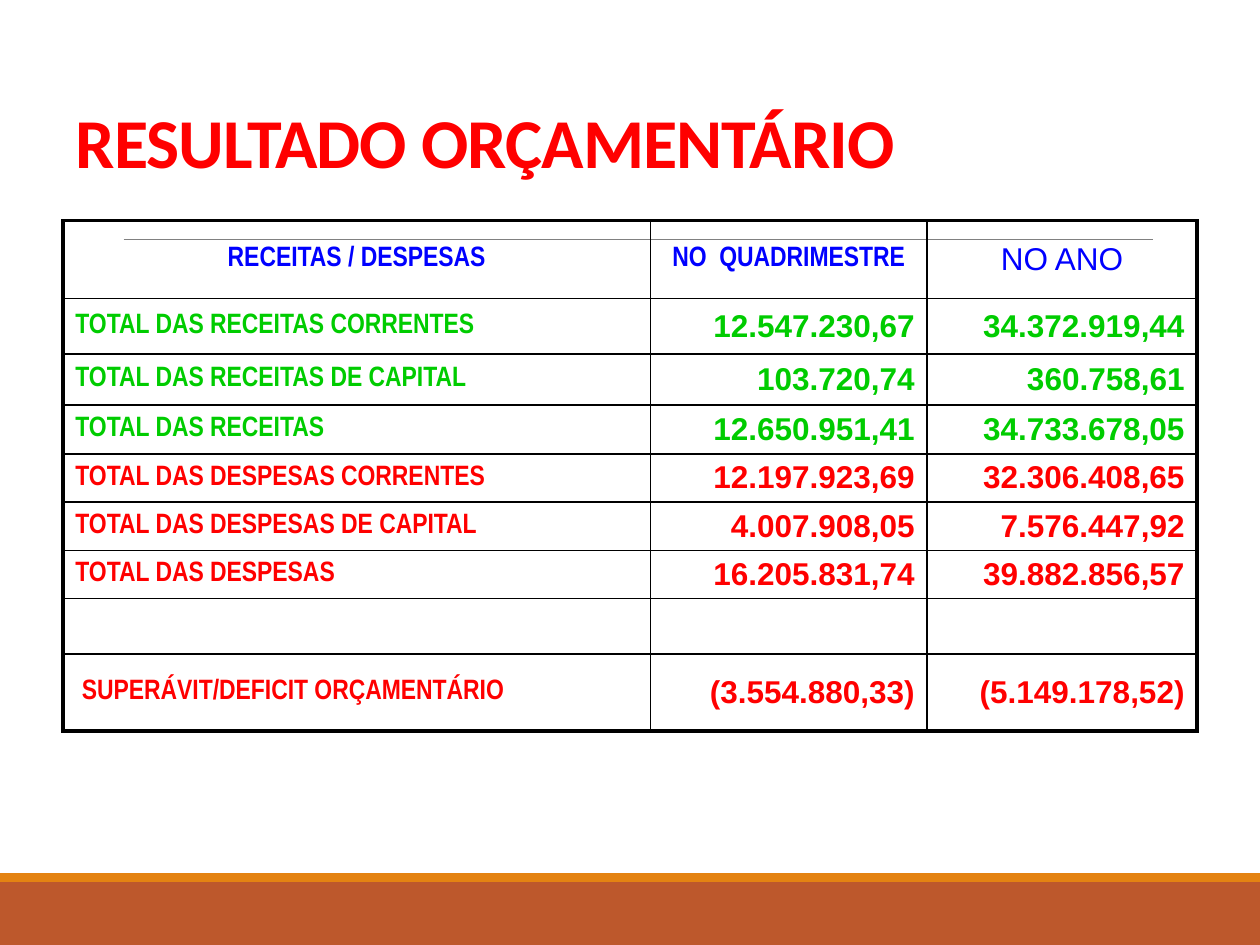
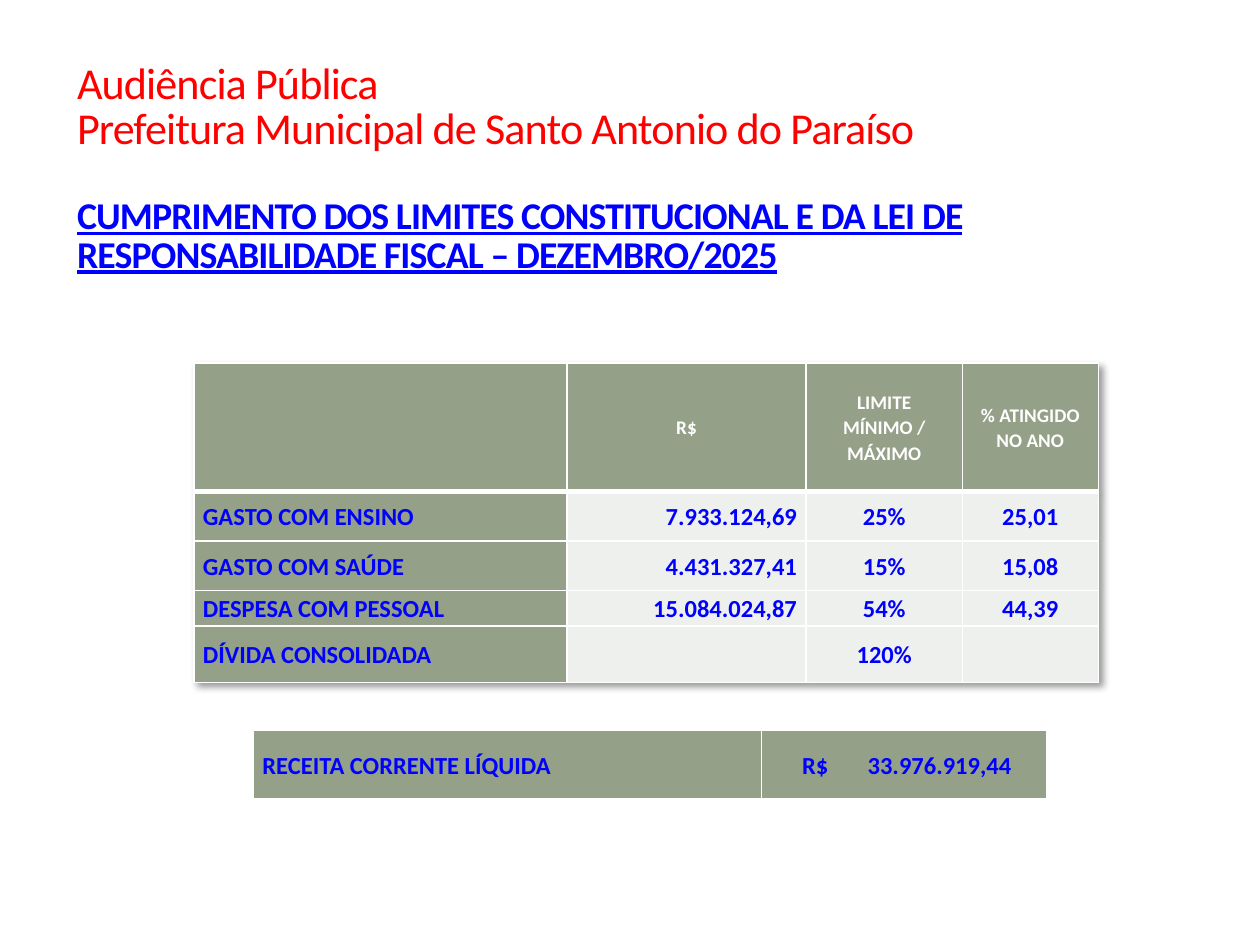
from dataclasses import dataclass, replace
from typing import Optional

from lxml.etree import SubElement
from pptx import Presentation
from pptx.dml.color import RGBColor
from pptx.enum.shapes import MSO_CONNECTOR as Connector, MSO_SHAPE as Shape
from pptx.enum.text import MSO_ANCHOR as Anchor, MSO_AUTO_SIZE as AutoSize, PP_ALIGN as Align
from pptx.oxml import parse_xml
from pptx.oxml.ns import nsdecls, qn
from pptx.util import Cm, Pt

RED = RGBColor(0xFF, 0x00, 0x00)
BLUE = RGBColor(0x00, 0x00, 0xFF)
GREEN = RGBColor(0x00, 0xCC, 0x00)
BLACK = RGBColor(0x00, 0x00, 0x00)
WHITE = RGBColor(0xFF, 0xFF, 0xFF)
GRAY = RGBColor(0x80, 0x80, 0x80)
SAGE = RGBColor(0x94, 0xA0, 0x88)
PALE_SAGE = RGBColor(0xEE, 0xF0, 0xED)
RUST = RGBColor(0xBD, 0x58, 0x2C)
ORANGE = RGBColor(0xE4, 0x83, 0x12)

SLIDE_WIDTH, SLIDE_HEIGHT = 25.4, 19.05
TITLE_WIDTH, TITLE_HEIGHT = 22.86, 3.18
TITLE_ONLY = 5


@dataclass(frozen=True)
class CellStyle:
    font: str
    size: float
    color: RGBColor
    bold: bool = True
    align: Align = Align.LEFT
    fill: Optional[RGBColor] = None
    line_spacing: float = 1.0
    inset_left: float = 0.25
    inset_right: float = 0.25
    inset_vertical: float = 0.13
    tab: float = 0


@dataclass(frozen=True)
class Rules:
    """Line widths in points around and inside a table."""
    color: RGBColor
    outer: float = 1
    inner: float = 1
    under_header: float = 1

    def widths(self, row, column, row_count, column_count):
        return {
            "L": self.inner if column else self.outer,
            "R": self.inner if column < column_count - 1 else self.outer,
            "T": self.outer if row == 0 else self.under_header if row == 1 else self.inner,
            "B": (self.under_header if row == 0
                  else self.outer if row == row_count - 1 else self.inner),
        }


class Builder:
    def __init__(self):
        self.deck = Presentation()
        self.deck.slide_width = Cm(SLIDE_WIDTH)
        self.deck.slide_height = Cm(SLIDE_HEIGHT)
        self.page = None

    def new_page(self):
        self.page = self.deck.slides.add_slide(self.deck.slide_layouts[TITLE_ONLY])

    def title(self, left, top, paragraphs):
        """Each paragraph is (lines, size, colour, bold, underline, space before)."""
        box = self.page.shapes.title
        box.left, box.top = Cm(left), Cm(top)
        box.width, box.height = Cm(TITLE_WIDTH), Cm(TITLE_HEIGHT)
        frame = box.text_frame
        frame.word_wrap = True
        frame.auto_size = AutoSize.NONE
        frame.vertical_anchor = Anchor.BOTTOM
        for index, (lines, size, color, bold, underline, before) in enumerate(paragraphs):
            para = frame.add_paragraph() if index else frame.paragraphs[0]
            para.alignment = Align.LEFT
            para.line_spacing = 0.85
            para.space_before = Pt(before)
            for number, line in enumerate(lines):
                if number:
                    para.add_line_break()
                span = self.span(para, line, "Calibri", size, color, bold)
                span.font.underline = underline
                span.font._element.set("spc", "-50")

    def span(self, para, text, font, size, color, bold):
        span = para.add_run()
        span.text = text
        span.font.name = font
        span.font.size = Pt(size)
        span.font.color.rgb = color
        span.font.bold = bold
        return span

    def band(self, top, height, color):
        band = self.page.shapes.add_shape(
            Shape.RECTANGLE, 0, Cm(top), Cm(SLIDE_WIDTH), Cm(height))
        band.shadow.inherit = False
        band.fill.solid()
        band.fill.fore_color.rgb = color
        band.line.fill.background()

    def rule(self, left, right, top):
        rule = self.page.shapes.add_connector(
            Connector.STRAIGHT, Cm(left), Cm(top), Cm(right), Cm(top))
        rule.line.color.rgb = GRAY
        rule.line.width = Pt(0.5)
        SubElement(rule._element.spPr, qn("a:effectLst"))

    def decoration(self):
        self.band(17.78, 1.27, RUST)
        self.band(17.6, 0.18, ORANGE)
        self.rule(2.49, 23.24, 4.83)

    def table(self, left, top, widths, heights, rows, rules, shadow=False):
        """Rows hold (text, CellStyle) pairs."""
        frame = self.page.shapes.add_table(
            len(heights), len(widths), Cm(left), Cm(top), Cm(sum(widths)), Cm(sum(heights)))
        table = frame.table
        table.first_row = table.horz_banding = False
        for column, width in zip(table.columns, widths):
            column.width = Cm(width)
        for row, height in zip(table.rows, heights):
            row.height = Cm(height)
        for r, row in enumerate(rows):
            for c, (text, style) in enumerate(row):
                cell = table.cell(r, c)
                self.borders(cell, rules.color, rules.widths(r, c, len(heights), len(widths)))
                self.fill_cell(cell, text, style)
        if shadow:
            self.table_shadow(table)

    def fill_cell(self, cell, text, style):
        cell.vertical_anchor = Anchor.MIDDLE
        cell.margin_left, cell.margin_right = Cm(style.inset_left), Cm(style.inset_right)
        cell.margin_top = cell.margin_bottom = Cm(style.inset_vertical)
        if style.fill is None:
            cell.fill.background()
        else:
            cell.fill.solid()
            cell.fill.fore_color.rgb = style.fill
        if not text:
            return
        para = cell.text_frame.paragraphs[0]
        para.alignment = style.align
        para.line_spacing = style.line_spacing
        if style.tab:
            tabs = SubElement(para._p.get_or_add_pPr(), qn("a:tabLst"))
            SubElement(tabs, qn("a:tab"), pos=str(Cm(style.tab)), algn="l")
        self.span(para, text, style.font, style.size, style.color, style.bold)

    def borders(self, cell, color, widths):
        properties = cell._tc.get_or_add_tcPr()
        for side, width in widths.items():
            line = SubElement(properties, qn(f"a:ln{side}"), w=str(Pt(width)))
            SubElement(SubElement(line, qn("a:solidFill")), qn("a:srgbClr"), val=str(color))

    def table_shadow(self, table):
        table._tbl.tblPr.insert(0, parse_xml(
            f'<a:effectLst {nsdecls("a")}>'
            '<a:outerShdw blurRad="50800" dist="38100" dir="2700000" algn="tl" rotWithShape="0">'
            '<a:srgbClr val="000000"><a:alpha val="40000"/></a:srgbClr>'
            '</a:outerShdw></a:effectLst>'))


def budget_result(builder):
    builder.new_page()
    builder.decoration()
    builder.title(1.27, 0.64, [(["RESULTADO ORÇAMENTÁRIO"], 40, RED, True, False, 0)])

    label = CellStyle("Arial Narrow", 16, RED)
    amount = CellStyle("Arial", 18, RED, align=Align.RIGHT)
    heading = replace(label, color=BLUE, align=Align.CENTER)
    year_heading = replace(amount, color=BLUE, bold=False, align=Align.CENTER)
    balance = replace(label, inset_left=0.38)
    rows = [[("RECEITAS / DESPESAS", heading), ("NO  QUADRIMESTRE", heading),
             ("NO ANO", year_heading)]]
    for name, period, year, color in [
        ("TOTAL DAS RECEITAS CORRENTES", "12.547.230,67", "34.372.919,44", GREEN),
        ("TOTAL DAS RECEITAS DE CAPITAL", "103.720,74", "360.758,61", GREEN),
        ("TOTAL DAS RECEITAS", "12.650.951,41", "34.733.678,05", GREEN),
        ("TOTAL DAS DESPESAS CORRENTES", "12.197.923,69", "32.306.408,65", RED),
        ("TOTAL DAS DESPESAS DE CAPITAL", "4.007.908,05", "7.576.447,92", RED),
        ("TOTAL DAS DESPESAS", "16.205.831,74", "39.882.856,57", RED),
        ("", "", "", RED),
    ]:
        colored_amount = replace(amount, color=color)
        rows.append([(name, replace(label, color=color)),
                     (period, colored_amount), (year, colored_amount)])
    rows.append([("SUPERÁVIT/DEFICIT ORÇAMENTÁRIO", balance),
                 ("(3.554.880,33)", amount), ("(5.149.178,52)", amount)])
    builder.table(1.27, 4.45, [11.84, 5.58, 5.44],
                  [1.57, 1.12, 1.02, 0.99, 0.97, 0.96, 0.96, 1.12, 1.55],
                  rows, Rules(BLACK, outer=2))


def legal_limits(builder):
    builder.new_page()
    builder.title(1.3, 2.51, [
        (["Audiência Pública", "Prefeitura Municipal de Santo Antonio do Paraíso"],
         25.2, RED, False, False, 0),
        (["CUMPRIMENTO DOS LIMITES CONSTITUCIONAL E DA LEI DE "
          "RESPONSABILIDADE FISCAL – DEZEMBRO/2025"], 21.6, BLUE, True, True, 26),
    ])

    label = CellStyle("Calibri", 14, BLUE, fill=SAGE, line_spacing=1.07,
                      inset_left=0.18, inset_right=0.18, inset_vertical=0)
    heading = replace(label, size=11, color=WHITE, align=Align.CENTER)
    amount = replace(label, fill=PALE_SAGE, align=Align.RIGHT)
    percent = replace(amount, align=Align.CENTER)
    rules = Rules(WHITE, under_header=3)
    headings = ["", "R$", "LIMITE MÍNIMO / MÁXIMO", "% ATINGIDO NO ANO"]
    limits = [
        ("GASTO COM ENSINO", "7.933.124,69", "25%", "25,01"),
        ("GASTO COM SAÚDE", "4.431.327,41", "15%", "15,08"),
        ("DESPESA COM PESSOAL", "15.084.024,87", "54%", "44,39"),
        ("DÍVIDA CONSOLIDADA", "", "120%", ""),
    ]
    rows = [[(text, heading) for text in headings]]
    rows += [list(zip(limit, (label, amount, percent, percent))) for limit in limits]
    builder.table(3.91, 7.32, [7.52, 4.82, 3.15, 2.74], [2.59, 1, 0.99, 0.72, 1.14],
                  rows, rules, shadow=True)

    revenue = replace(label, inset_left=0.82, tab=1.32)
    builder.table(5.11, 14.73, [10.24, 5.75], [1.4],
                  [[("RECEITA CORRENTE LÍQUIDA", label), ("R$\t33.976.919,44", revenue)]], rules)


def main():
    builder = Builder()
    budget_result(builder)
    legal_limits(builder)
    builder.deck.save("out.pptx")


if __name__ == "__main__":
    main()
